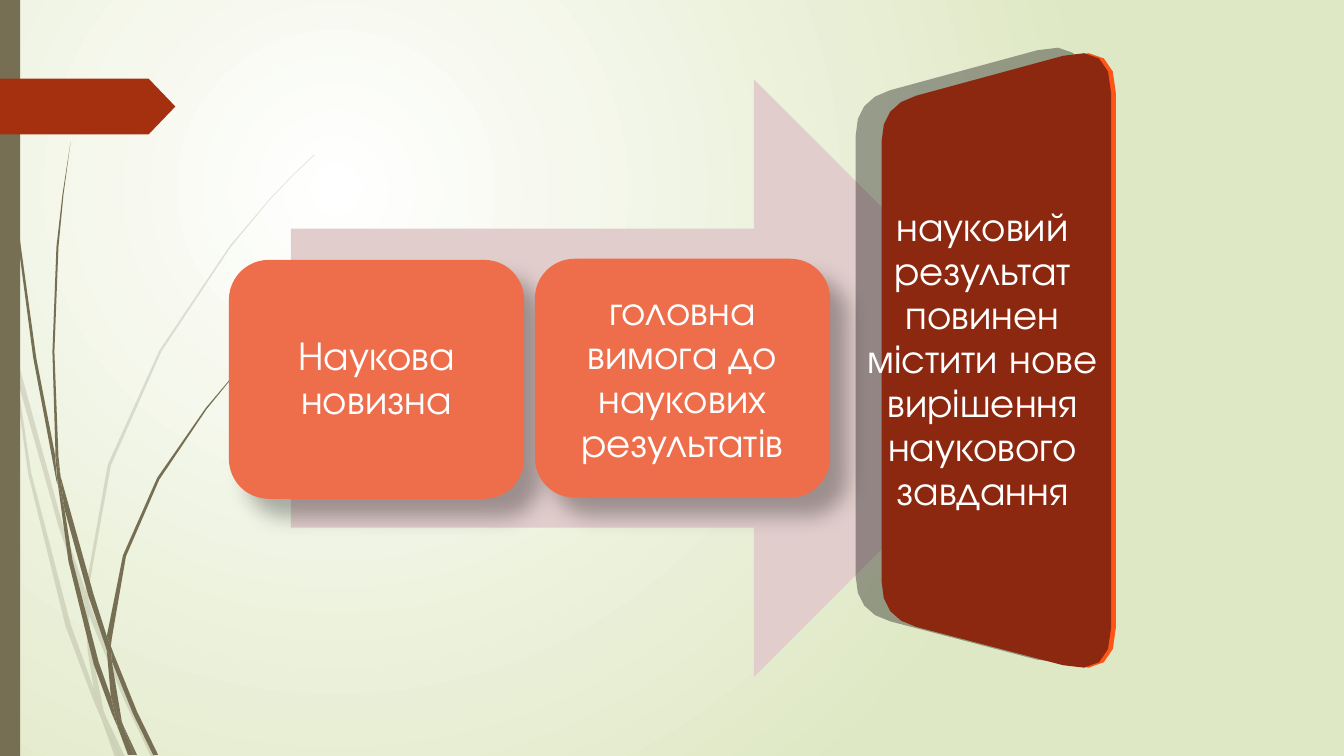
import math

from lxml import etree
from pptx import Presentation
from pptx.dml.color import RGBColor
from pptx.enum.shapes import MSO_SHAPE
from pptx.enum.text import MSO_ANCHOR, PP_ALIGN
from pptx.oxml.ns import qn
from pptx.util import Cm, Pt

RECT = MSO_SHAPE.RECTANGLE
TAG = MSO_SHAPE.PENTAGON
ARROW = MSO_SHAPE.RIGHT_ARROW
CARD = MSO_SHAPE.ROUNDED_RECTANGLE
CENTER = PP_ALIGN.CENTER
MIDDLE = MSO_ANCHOR.MIDDLE

FONT = "TeX Gyre Adventor"
WHITE = RGBColor(0xFF, 0xFF, 0xFF)
BLACK = RGBColor(0, 0, 0)
PALE_GREEN = RGBColor(0xDF, 0xE8, 0xC4)
OLIVE = RGBColor(0x76, 0x6F, 0x54)
RED = RGBColor(0xA5, 0x30, 0x10)
PINK = RGBColor(0xE1, 0xCD, 0xCC)
CORAL = RGBColor(0xEE, 0x6E, 0x4B)
DARK_RED = RGBColor(0x8C, 0x28, 0x10)
ORANGE = RGBColor(0xFF, 0x55, 0x19)

GRASS_UNIT = Cm(2.54) // 100
PALE_GRASS = [
    [(11, 350), (9, 322), (0, 282), (0, 299), (10, 344)],
    [(58, 522), (84, 599), (85, 586), (62, 520), (14, 345), (17, 376)],
    [(92, 607), (88, 596), (88, 610), (123, 694), (150, 751), (155, 751),
     (127, 692)],
    [(119, 751), (124, 751), (105, 711)],
    [(93, 683), (70, 619), (31, 469), (17, 376), (11, 350), (28, 470),
     (65, 621), (92, 693), (101, 714), (99, 707)],
    [(84, 599), (87, 646), (93, 683), (96, 692), (105, 711), (103, 706),
     (91, 646), (88, 610), (88, 608)],
    [(88, 584), (110, 462), (160, 349), (229, 245), (268, 198), (290, 175),
     (312, 154), (312, 153), (289, 175), (268, 197), (228, 244), (158, 348),
     (107, 461), (85, 584), (85, 586), (88, 596)],
    [(101, 714), (114, 751), (119, 751)],
    [(88, 608), (88, 610), (88, 596), (85, 586), (84, 599)],
    [(96, 692), (93, 683), (99, 707), (101, 714), (119, 751), (105, 711)],
]
DARK_GRASS = [
    [(7, 110), (17, 233), (33, 355), (56, 477), (57, 481), (55, 457),
     (55, 453), (36, 355), (19, 232), (8, 109), (5, 48), (4, 0), (3, 0),
     (4, 48)],
    [(88, 592), (106, 645), (106, 633), (106, 631), (93, 590), (60, 472),
     (64, 505)],
    [(113, 649), (110, 641), (111, 656), (132, 708), (152, 749), (157, 749),
     (136, 706)],
    [(110, 691), (98, 657), (72, 556), (64, 505), (57, 477), (68, 557),
     (93, 659), (111, 708), (117, 722), (116, 717)],
    [(60, 472), (58, 453), (54, 349), (58, 245), (63, 193), (70, 141),
     (62, 193), (56, 245), (52, 349), (55, 449)],
    [(133, 749), (136, 749), (122, 719)],
    [(57, 477), (64, 505), (60, 472), (55, 449), (55, 453)],
    [(111, 633), (125, 552), (158, 476), (205, 406), (231, 374), (245, 359),
     (261, 344), (260, 344), (245, 358), (231, 373), (204, 405), (156, 474),
     (122, 551), (106, 631), (110, 641)],
    [(117, 722), (127, 749), (131, 749)],
    [(106, 645), (110, 691), (116, 706), (122, 719), (121, 716), (111, 656),
     (109, 651)],
    [(106, 645), (109, 651), (111, 656), (110, 641), (106, 631), (106, 633)],
    [(116, 706), (110, 691), (116, 717), (117, 722), (130, 749), (133, 749),
     (122, 719)],
]
PANEL = [(22.22, 2.65), (28, 1.08), (28, 17.08), (22.22, 15.57)]
PANEL_RADII = [0.9, 1.25, 1.25, 0.9]


def set_background(s):
    fill = s.background.fill
    fill.gradient()
    for stop, color in zip(fill.gradient_stops, (WHITE, PALE_GREEN)):
        stop.color.rgb = color
    grad = s.background._cSld.find(".//" + qn("a:gradFill"))
    grad.remove(grad.find(qn("a:lin")))
    circle = etree.SubElement(grad, qn("a:path"), path="circle")
    etree.SubElement(circle, qn("a:fillToRect"),
                     l="50000", t="50000", r="100000", b="100000")


def set_alpha(parent, percent):
    color = parent.find(".//" + qn("a:srgbClr"))
    etree.SubElement(color, qn("a:alpha"), val=str(percent * 1000))


def add_shadow(sp, blur, distance, degrees, percent):
    effects = sp._element.spPr.find(qn("a:effectLst"))
    shadow = etree.SubElement(effects, qn("a:outerShdw"), blurRad=str(Pt(blur)),
                              dist=str(Pt(distance)), dir=str(degrees * 60000),
                              rotWithShape="0")
    etree.SubElement(shadow, qn("a:srgbClr"), val=str(BLACK))
    set_alpha(shadow, percent)


def paint(sp, color, alpha=100):
    sp.shadow.inherit = False
    sp.fill.solid()
    sp.fill.fore_color.rgb = color
    sp.line.fill.background()
    if alpha < 100:
        set_alpha(sp._element.spPr, alpha)
    return sp


def add_block(s, kind, color, x, y, w, h):
    return paint(s.shapes.add_shape(kind, Cm(x), Cm(y), Cm(w), Cm(h)), color)


def add_outline(s, points, color, unit=1, alpha=100):
    builder = s.shapes.build_freeform(*points[0], scale=unit)
    builder.add_line_segments(points[1:])
    return paint(builder.convert_to_shape(), color, alpha)


def toward(start, end, distance):
    t = distance / math.dist(start, end)
    return tuple(a + t * (b - a) for a, b in zip(start, end))


def round_corners(corners, radii, steps=4):
    outline = []
    for i, (corner, radius) in enumerate(zip(corners, radii)):
        a = toward(corner, corners[i - 1], radius)
        b = toward(corner, corners[(i + 1) % len(corners)], radius)
        for k in range(steps + 1):
            t = k / steps
            outline.append(tuple(
                (1 - t) ** 2 * p + 2 * t * (1 - t) * q + t * t * r
                for p, q, r in zip(a, corner, b)))
    return outline


def add_panel(s):
    outline = round_corners(PANEL, PANEL_RADII)
    for shift, color in ((0.12, ORANGE), (0, DARK_RED)):
        face = add_outline(s, [(Cm(x + shift), Cm(y)) for x, y in outline], color)
    add_shadow(face, 0, 19, 192, 35)


def write(sp, text):
    tf = sp.text_frame
    tf.word_wrap = True
    tf.vertical_anchor = MIDDLE
    tf.margin_left = tf.margin_right = tf.margin_top = tf.margin_bottom = Cm(0.3)
    p = tf.paragraphs[0]
    p.alignment = CENTER
    p.line_spacing = 0.9
    r = p.add_run()
    r.text = text
    r.font.name = FONT
    r.font.size = Pt(29)
    r.font.color.rgb = WHITE


def add_card(s, x, y, text):
    sp = add_block(s, CARD, CORAL, x, y, 7.44, 6.02)
    add_shadow(sp, 15, 18, 45, 30)
    write(sp, text)


def main():
    prs = Presentation()
    prs.slide_width, prs.slide_height = Cm(33.87), Cm(19.05)
    s = prs.slides.add_slide(prs.slide_layouts[6])
    set_background(s)
    for blades, alpha in ((PALE_GRASS, 20), (DARK_GRASS, 100)):
        for points in blades:
            add_outline(s, points, OLIVE, GRASS_UNIT, alpha)
    add_block(s, RECT, OLIVE, 0, 0, 0.51, 19.05)
    add_block(s, TAG, RED, 0, 1.98, 4.42, 1.41).adjustments[0] = 0.48
    add_block(s, ARROW, PINK, 7.33, 2, 19.2, 15.06)
    add_card(s, 5.77, 6.55, "Наукова новизна")
    add_card(s, 13.48, 6.52, "головна вимога до наукових результатів")
    add_panel(s)
    write(s.shapes.add_textbox(Cm(21.3), Cm(1.98), Cm(6.93), Cm(14.2)),
          "науковий результат повинен містити нове вирішення наукового завдання")
    prs.save("out.pptx")


if __name__ == "__main__":
    main()
